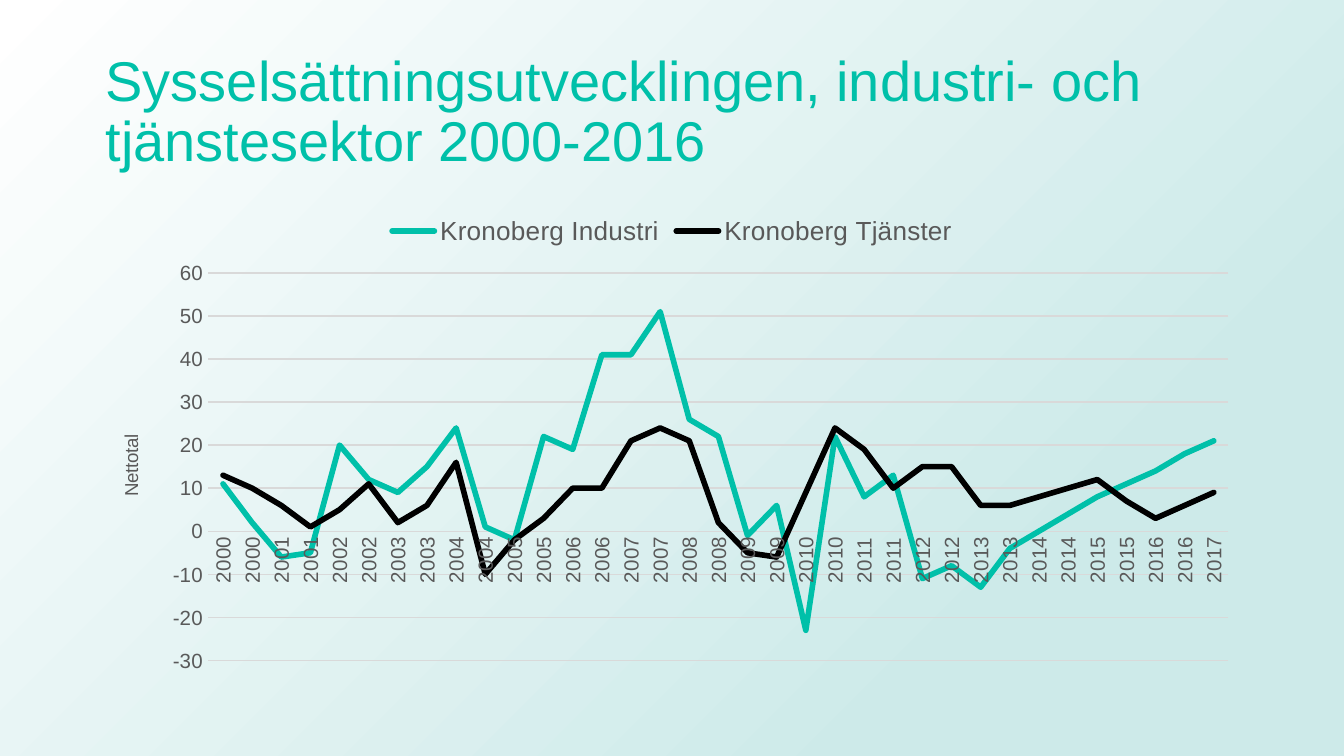
from lxml import etree
from pptx import Presentation
from pptx import util as u
from pptx.chart.data import CategoryChartData
from pptx.dml.color import RGBColor
from pptx.enum import chart as ch, shapes, text
from pptx.oxml import parse_xml
from pptx.oxml.ns import nsdecls, qn

W = u.Inches(10)
H = W * 9 // 16
COL, ROW = W / 100, H / 100
TEAL = RGBColor(0x00, 0xC0, 0xA9)
BLACK = RGBColor(0x00, 0x00, 0x00)
GREY = RGBColor(0x59, 0x59, 0x59)
RULE = RGBColor(0xD9, 0xD9, 0xD9)
MIST = RGBColor(0xCD, 0xEA, 0xE9)
WHITE = RGBColor(0xFF, 0xFF, 0xFF)

YEARS = [str(2000 + i // 2) for i in range(35)]
SERIES = [
    ("Kronoberg Industri", TEAL,
     [11, 2, -6, -5, 20, 12, 9, 15, 24, 1, -2, 22, 19, 41, 41, 51, 26, 22,
      -1, 6, -23, 22, 8, 13, -11, -8, -13, -4, 0, 4, 8, 11, 14, 18, 21]),
    ("Kronoberg Tjänster", BLACK,
     [13, 10, 6, 1, 5, 11, 2, 6, 16, -10, -2, 3, 10, 10, 21, 24, 21, 2,
      -5, -6, 9, 24, 19, 10, 15, 15, 6, 6, 8, 10, 12, 7, 3, 6, 9]),
]


def box(x, y, w, h):
    return [int(v) for v in (COL * x, ROW * y, COL * w, ROW * h)]


def set_attrs(obj, **values):
    for name, value in values.items():
        setattr(obj, name, value)


def set_font(font, size, color):
    set_attrs(font, name="Arial", size=u.Pt(size), bold=False)
    font.color.rgb = color


def set_line(line, color, width):
    line.color.rgb = color
    line.width = u.Pt(width)


def set_layout(parent, index, **values):
    layout = parent.find(qn("c:layout"))
    if layout is None:
        layout = parse_xml(f"<c:layout {nsdecls('c')}/>")
        parent.insert(index, layout)
    manual = etree.SubElement(layout, qn("c:manualLayout"))
    for name, value in values.items():
        etree.SubElement(manual, qn(f"c:{name}")).set("val", str(value))


def add_backdrop(s, area):
    sp = s.shapes.add_shape(shapes.MSO_SHAPE.RECTANGLE, *area)
    sp.shadow.inherit = False
    sp.line.fill.background()
    sp.fill.gradient()
    grad = sp._element.spPr.find(qn("a:gradFill"))
    grad.getparent().replace(grad, parse_xml(
        f'<a:gradFill {nsdecls("a")} rotWithShape="1"><a:gsLst>'
        f'<a:gs pos="23000"><a:srgbClr val="{MIST}"/></a:gs>'
        f'<a:gs pos="100000"><a:srgbClr val="{WHITE}"/></a:gs></a:gsLst>'
        '<a:path path="circle"><a:fillToRect l="100000" t="100000"/></a:path>'
        '</a:gradFill>'))


def add_title(s, area):
    tf = s.shapes.add_textbox(*area).text_frame
    set_attrs(tf, word_wrap=True, vertical_anchor=text.MSO_ANCHOR.MIDDLE)
    p = tf.paragraphs[0]
    p.line_spacing = 0.9
    r = p.add_run()
    r.text = "Sysselsättningsutvecklingen, industri- och tjänstesektor 2000-2016"
    set_font(r.font, 30, TEAL)


def format_axes(chart):
    years, totals = chart.category_axis, chart.value_axis
    for axis in (years, totals):
        set_attrs(axis, major_tick_mark=ch.XL_TICK_MARK.NONE,
                  minor_tick_mark=ch.XL_TICK_MARK.NONE)
        set_font(axis.tick_labels.font, 11, GREY)
    set_line(years.format.line, RULE, 0.75)
    years._element.find(qn("c:txPr")).find(qn("a:bodyPr")).set("rot", "-5400000")
    set_attrs(totals, minimum_scale=-30, maximum_scale=60, major_unit=10,
              has_major_gridlines=True)
    set_attrs(totals.tick_labels, number_format="0", number_format_is_linked=False)
    totals.format.line.fill.background()
    set_line(totals.major_gridlines.format.line, RULE, 0.75)
    title = totals.axis_title
    p = title.text_frame.paragraphs[0]
    r = p.add_run()
    r.text = "Nettotal"
    set_font(r.font, 10, GREY)
    title.text_frame._txBody.find(qn("a:bodyPr")).set("rot", "-5400000")
    set_layout(title._element, 1, xMode="edge", yMode="edge", x=0.02, y=0.48)


def add_line_chart(s, area):
    data = CategoryChartData(number_format="0")
    data.categories = YEARS
    for name, _, values in SERIES:
        data.add_series(name, values)
    chart = s.shapes.add_chart(ch.XL_CHART_TYPE.LINE, *area, data).chart
    set_attrs(chart, has_title=False, has_legend=True)
    set_font(chart.font, 10, GREY)
    set_attrs(chart.legend, position=ch.XL_LEGEND_POSITION.TOP,
              include_in_layout=False)
    set_font(chart.legend.font, 14, GREY)
    plot = chart.plots[0]
    plot.vary_by_categories = False
    for series, (_, color, _) in zip(plot.series, SERIES):
        series.smooth = False
        series.marker.style = ch.XL_MARKER_STYLE.NONE
        set_line(series.format.line, color, 3)
        series.format.line._get_or_add_ln().set("cap", "rnd")
    format_axes(chart)
    set_layout(chart._chartSpace.chart.plotArea, 0, layoutTarget="inner",
               xMode="edge", yMode="edge", x=0.1, y=0.15, w=0.88, h=0.81)


def main():
    prs = Presentation()
    set_attrs(prs, slide_width=W, slide_height=H)
    s = prs.slides.add_slide(prs.slide_layouts[6])
    add_backdrop(s, box(0, 0, 100, 100))
    add_title(s, box(6.88, 5.32, 86.25, 19.33))
    add_line_chart(s, box(6.88, 26.62, 86.25, 63.3))
    prs.save("out.pptx")


if __name__ == "__main__":
    main()
